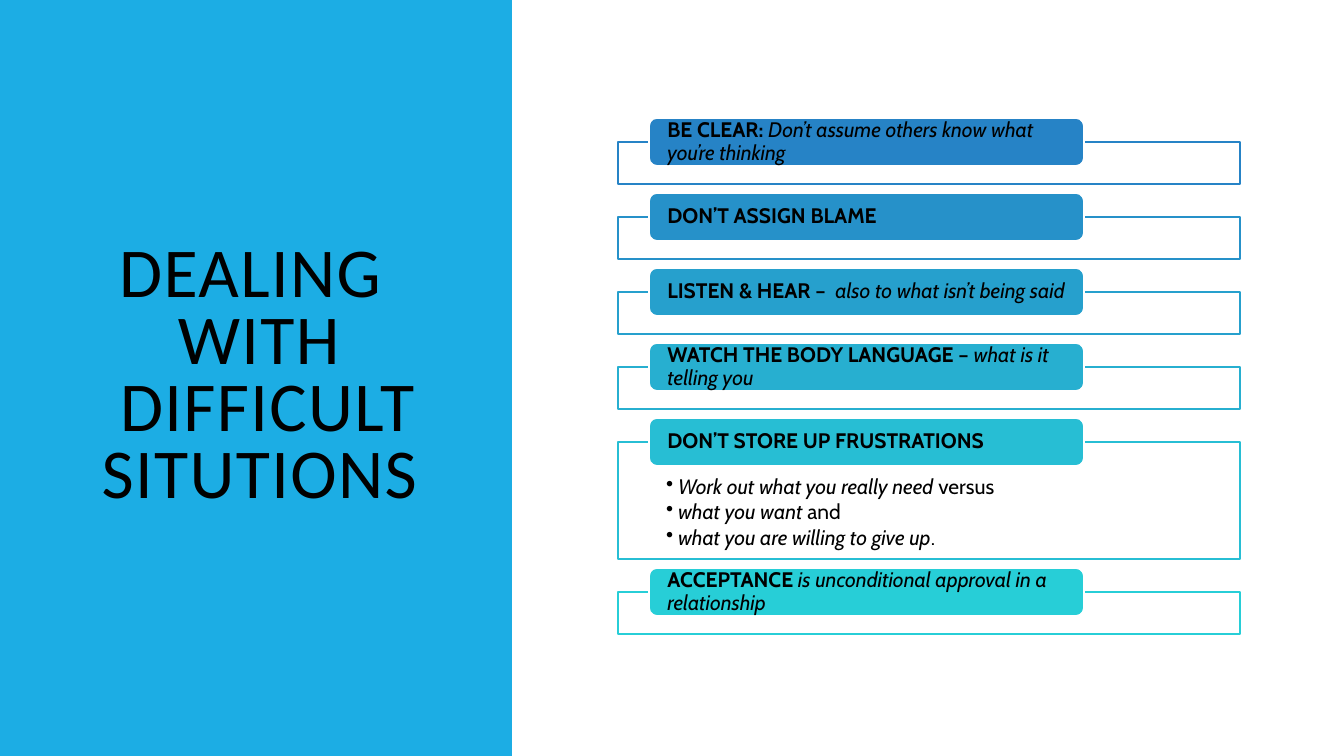
from dataclasses import dataclass

from lxml import etree
from pptx import Presentation
from pptx.dml.color import RGBColor
from pptx.enum.shapes import MSO_SHAPE
from pptx.enum.text import MSO_ANCHOR, PP_ALIGN
from pptx.oxml.ns import qn
from pptx.util import Pt

RECT = MSO_SHAPE.RECTANGLE
ROUND_RECT = MSO_SHAPE.ROUNDED_RECTANGLE
TOP, MIDDLE = MSO_ANCHOR.TOP, MSO_ANCHOR.MIDDLE
LEFT, CENTER = PP_ALIGN.LEFT, PP_ALIGN.CENTER

EMU_PER_PX = 914400 / 100.8
SLIDE_W, SLIDE_H = 1344, 756
BLACK, WHITE, PANEL_BLUE = "000000", "FFFFFF", "1CADE4"

BOX_X, BOX_Y, BOX_W, BOX_GAP = 618, 142, 622, 33
BAR_X, BAR_W, BAR_H = 649, 435, 48
BULLET_INDENT = 12

PLAIN = {"size": Pt(15), "name": "Cabin", "bold": False, "italic": False}
BOLD = PLAIN | {"bold": True}
ITALIC = PLAIN | {"italic": True}
TITLE = PLAIN | {"size": Pt(50), "name": "Calibri"}


@dataclass
class Tip:
    color: str
    heading: str
    detail: str = ""
    bullets: tuple[tuple[str, str], ...] = ()
    height: int = 42


TIPS = [
    Tip("2683C6", "BE CLEAR: ", "Don’t assume others know what you’re thinking"),
    Tip("2691C9", "DON’T ASSIGN BLAME"),
    Tip("26A0CD", "LISTEN & HEAR –  ", "also to what isn’t being said"),
    Tip("27AFD0", "WATCH THE BODY LANGUAGE – ", "what is it telling you"),
    Tip("27BED4", "DON’T STORE UP FRUSTRATIONS", bullets=(
        ("Work out what you really need ", "versus"),
        ("what you want ", "and"),
        ("what you are willing to give up", "."),
    ), height=117),
    Tip("27CED7", "ACCEPTANCE ", "is unconditional approval in a relationship"),
]


def px(n: int) -> int:
    return round(n * EMU_PER_PX)


def rgb(color: str) -> RGBColor:
    return RGBColor.from_string(color)


def add_box(s, kind, at: tuple[int, int, int, int], fill: str, line: str = ""):
    sp = s.shapes.add_shape(kind, *map(px, at))
    sp.shadow.inherit = False
    sp.fill.solid()
    sp.fill.fore_color.rgb = rgb(fill)
    if line:
        sp.line.color.rgb = rgb(line)
        sp.line.width = Pt(1.25)
    else:
        sp.line.fill.background()
    return sp


def set_frame(sp, anchor, insets: tuple[int, int, int, int]):
    tf = sp.text_frame
    values = dict(zip(("margin_left", "margin_top", "margin_right", "margin_bottom"),
                      map(px, insets)))
    values |= {"word_wrap": True, "vertical_anchor": anchor}
    for key, value in values.items():
        setattr(tf, key, value)
    return tf


def add_run(p, text: str, style: dict):
    r = p.add_run()
    r.text = text
    for key, value in style.items():
        setattr(r.font, key, value)
    r.font.color.rgb = rgb(BLACK)
    return r


def set_paragraph(p, align, spacing: float) -> None:
    p.alignment = align
    p.line_spacing = spacing


def set_bullet(p) -> None:
    props = p._p.get_or_add_pPr()
    props.set("marL", str(px(BULLET_INDENT)))
    props.set("indent", str(-px(BULLET_INDENT)))
    etree.SubElement(props, qn("a:buChar")).set("char", "•")


def add_title(s) -> None:
    sp = s.shapes.add_textbox(*map(px, (71, 71, 377, 614)))
    p = set_frame(sp, MIDDLE, (10, 5, 10, 5)).paragraphs[0]
    set_paragraph(p, CENTER, 0.8)
    lines = ("DEALING ", "WITH", " DIFFICULT SITUTIONS")
    for i, text in enumerate(lines):
        if i:
            p.add_line_break()
        r = add_run(p, text, TITLE)
        r.font._element.set("spc", "100")


def add_tip(s, tip: Tip, y: int) -> None:
    # Outlined box, nearly opaque white
    box = add_box(s, RECT, (BOX_X, y, BOX_W, tip.height), WHITE, tip.color)
    white = box.fill._xPr.find(qn("a:solidFill"))[0]
    etree.SubElement(white, qn("a:alpha")).set("val", "90000")

    # Bullets inside the box
    if tip.bullets:
        tf = set_frame(box, TOP, (48, 34, 48, 12))
        for i, (lead, ending) in enumerate(tip.bullets):
            p = tf.add_paragraph() if i else tf.paragraphs[0]
            set_paragraph(p, LEFT, 0.9)
            p.space_after = Pt(2)
            set_bullet(p)
            add_run(p, lead, ITALIC)
            add_run(p, ending, PLAIN)

    # Heading bar centred on the top edge
    bar = add_box(s, ROUND_RECT, (BAR_X, y - BAR_H // 2, BAR_W, BAR_H), tip.color, WHITE)
    p = set_frame(bar, MIDDLE, (16, 0, 16, 0)).paragraphs[0]
    set_paragraph(p, LEFT, 0.9)
    add_run(p, tip.heading, BOLD)
    if tip.detail:
        add_run(p, tip.detail, ITALIC)


def main() -> None:
    prs = Presentation()
    prs.slide_width, prs.slide_height = px(SLIDE_W), px(SLIDE_H)
    s = prs.slides.add_slide(prs.slide_layouts[6])

    # Title panel
    add_box(s, RECT, (0, 0, 512, SLIDE_H), PANEL_BLUE)
    add_title(s)

    # Tips, stacked with equal gaps
    y = BOX_Y
    for tip in TIPS:
        add_tip(s, tip, y)
        y += tip.height + BOX_GAP

    prs.save("out.pptx")


if __name__ == "__main__":
    main()
